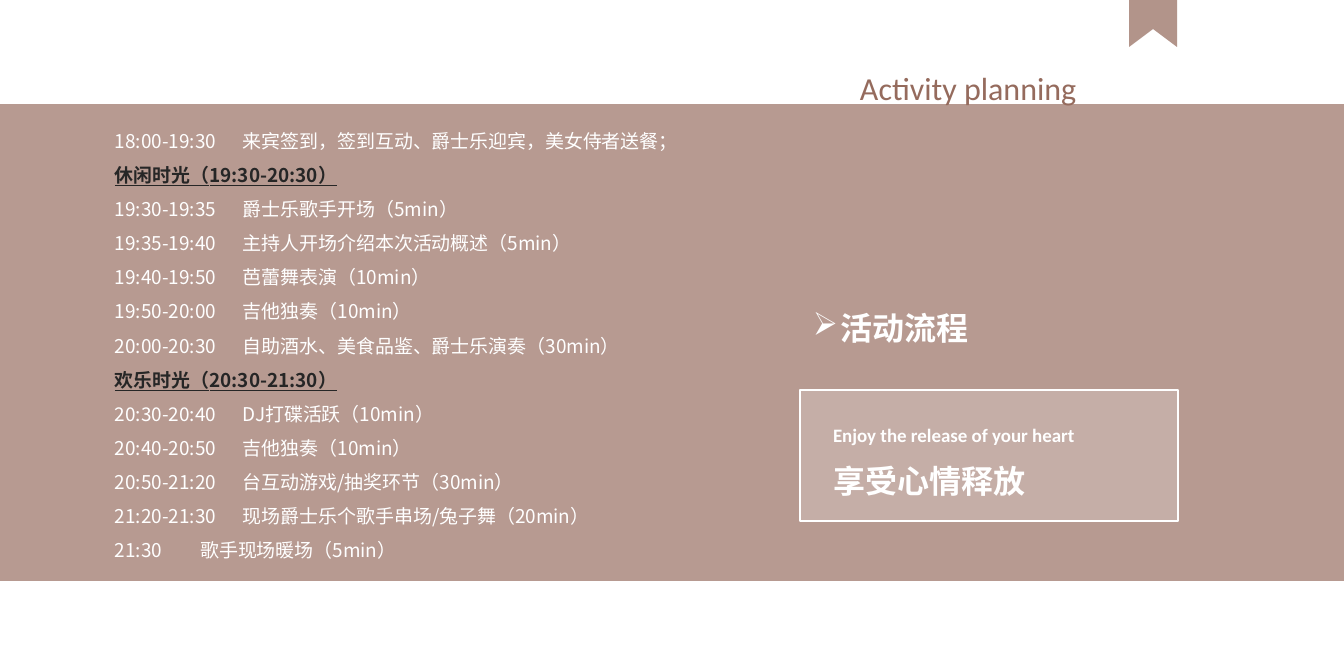
from lxml import etree
from pptx import Presentation
from pptx.dml.color import RGBColor
from pptx.enum.shapes import MSO_SHAPE
from pptx.enum.text import MSO_ANCHOR, MSO_AUTO_SIZE, PP_ALIGN
from pptx.oxml.ns import qn
from pptx.util import Pt

RECTANGLE = MSO_SHAPE.RECTANGLE
TOP = MSO_ANCHOR.TOP
NO_AUTOFIT = MSO_AUTO_SIZE.NONE
JUSTIFY, LEFT = PP_ALIGN.JUSTIFY, PP_ALIGN.LEFT
PX = 10716  # EMU in one px
TITLE_AND_CONTENT = 1
BACK = 2  # first drawable position in the shape tree

THEME = {
    "brown": RGBColor(0x95, 0x6B, 0x5D),
    "white": RGBColor(0xFF, 0xFF, 0xFF),
    "dark": RGBColor(0x26, 0x26, 0x26),
    "large": Pt(27),
    "small": Pt(16),
    "latin": "Calibri",
    "heading": "Noto Sans CJK JP",
    "slogan": "Noto Sans CJK SC",
}
SMALL_WHITE = {"size": THEME["small"], "color": THEME["white"]}
LARGE_WHITE = {"size": THEME["large"], "color": THEME["white"], "bold": True}
STYLES = {
    "title": {"size": THEME["large"], "color": THEME["brown"], "name": THEME["latin"], "bold": False},
    "flow": {**LARGE_WHITE, "name": THEME["heading"]},
    "motto": {**SMALL_WHITE, "name": THEME["latin"], "bold": True},
    "slogan": {**LARGE_WHITE, "name": THEME["slogan"]},
    "entry": {**SMALL_WHITE, "name": THEME["heading"], "bold": False},
    "session": {"size": THEME["small"], "color": THEME["dark"], "name": THEME["heading"],
                "bold": True, "underline": True},
}
LARGE_LINE, SCHEDULE_LINE = Pt(32.4), Pt(28.8)

SCHEDULE = [
    ("18:00-19:30", "来宾签到，签到互动、爵士乐迎宾，美女侍者送餐；"),
    ("休闲时光（19:30-20:30）",),
    ("19:30-19:35", "爵士乐歌手开场（5min）"),
    ("19:35-19:40", "主持人开场介绍本次活动概述（5min）"),
    ("19:40-19:50", "芭蕾舞表演（10min）"),
    ("19:50-20:00", "吉他独奏（10min）"),
    ("20:00-20:30", "自助酒水、美食品鉴、爵士乐演奏（30min）"),
    ("欢乐时光（20:30-21:30）",),
    ("20:30-20:40", "DJ打碟活跃（10min）"),
    ("20:40-20:50", "吉他独奏（10min）"),
    ("20:50-21:20", "台互动游戏/抽奖环节（30min）"),
    ("21:20-21:30", "现场爵士乐个歌手串场/兔子舞（20min）"),
    ("21:30", "歌手现场暖场（5min）"),
]


def paint(shape, color, opacity):
    """Give the shape a see-through fill, without shadow or outline."""
    shape.shadow.inherit = False
    shape.line.fill.background()
    shape.fill.solid()
    shape.fill.fore_color.rgb = color
    color_node = shape.element.spPr.find(qn("a:solidFill"))[0]
    etree.SubElement(color_node, qn("a:alpha"), val=str(opacity * 1000))


def write(para, text, style, line=None):
    """Put text into a paragraph; style names an entry of STYLES."""
    para.alignment = LEFT if style in ("entry", "session") else JUSTIFY
    para.space_before = Pt(0)
    if line:
        para.line_spacing = line
    span = para.add_run()
    span.text = text
    for name, value in STYLES[style].items():
        if name == "color":
            span.font.color.rgb = value
        else:
            setattr(span.font, name, value)
    etree.SubElement(span.font._element, qn("a:ea"), typeface=STYLES[style]["name"])


deck = Presentation()
deck.slide_width, deck.slide_height = 1344 * PX, 672 * PX
page = deck.slides.add_slide(deck.slide_layouts[TITLE_AND_CONTENT])
shapes = page.shapes
title, schedule = page.placeholders

band = shapes.add_shape(RECTANGLE, 0, 104 * PX, 1344 * PX, 477 * PX)
paint(band, THEME["brown"], 68)
shapes.element.insert(BACK, band.element)

card = shapes.add_shape(RECTANGLE, 800 * PX, 390 * PX, 378 * PX, 131 * PX)
paint(card, THEME["white"], 20)
card.line.color.rgb = THEME["white"]
card.line.width = Pt(2)

ribbon_outline = shapes.build_freeform(1129, 0, scale=PX)
ribbon_outline.add_line_segments([(1177, 0), (1177, 47), (1153, 29), (1129, 47)])
ribbon = ribbon_outline.convert_to_shape()
paint(ribbon, THEME["brown"], 72)

flow, motto, slogan = (shapes.add_textbox(0, 0, PX, PX) for _ in range(3))
# box, left, top, width, height, side inset, top inset
for box, left, top, width, height, side, upper in [
    (title, 847, 61, 460, 52, 13, 7),
    (schedule, 107, 114, 598, 457, 8, 4),
    (flow, 800, 302, 263, 52, 13, 7),
    (motto, 820, 417, 349, 36, 13, 7),
    (slogan, 821, 455, 346, 52, 13, 7),
]:
    place = {"left": left, "top": top, "width": width, "height": height}
    for name, value in place.items():
        setattr(box, name, value * PX)
    frame_format = {
        "margin_left": side * PX, "margin_right": side * PX,
        "margin_top": upper * PX, "margin_bottom": upper * PX,
        "word_wrap": True, "auto_size": NO_AUTOFIT, "vertical_anchor": TOP,
    }
    for name, value in frame_format.items():
        setattr(box.text_frame, name, value)

for box, text, style, line in [
    (title, "Activity planning", "title", None),
    (flow, "活动流程", "flow", LARGE_LINE),
    (motto, "Enjoy the release of your heart", "motto", None),
    (slogan, "享受心情释放", "slogan", LARGE_LINE),
]:
    write(box.text_frame.paragraphs[0], text, style, line)

arrow_format = flow.text_frame.paragraphs[0]._p.get_or_add_pPr()
arrow_format.set("marL", str(28 * PX))
arrow_format.set("indent", str(-28 * PX))
etree.SubElement(arrow_format, qn("a:buChar"), char="➢")

for index, entry in enumerate(SCHEDULE):
    frame = schedule.text_frame
    para = frame.add_paragraph() if index else frame.paragraphs[0]
    write(para, "\t".join(entry), "entry" if len(entry) == 2 else "session", SCHEDULE_LINE)
    entry_format = para._p.get_or_add_pPr()
    entry_format.set("marL", "0")
    entry_format.set("indent", "0")
    etree.SubElement(entry_format, qn("a:buNone"))
    tabs = etree.SubElement(entry_format, qn("a:tabLst"))
    etree.SubElement(tabs, qn("a:tab"), pos=str(116 * PX), algn="l")

deck.save("out.pptx")
